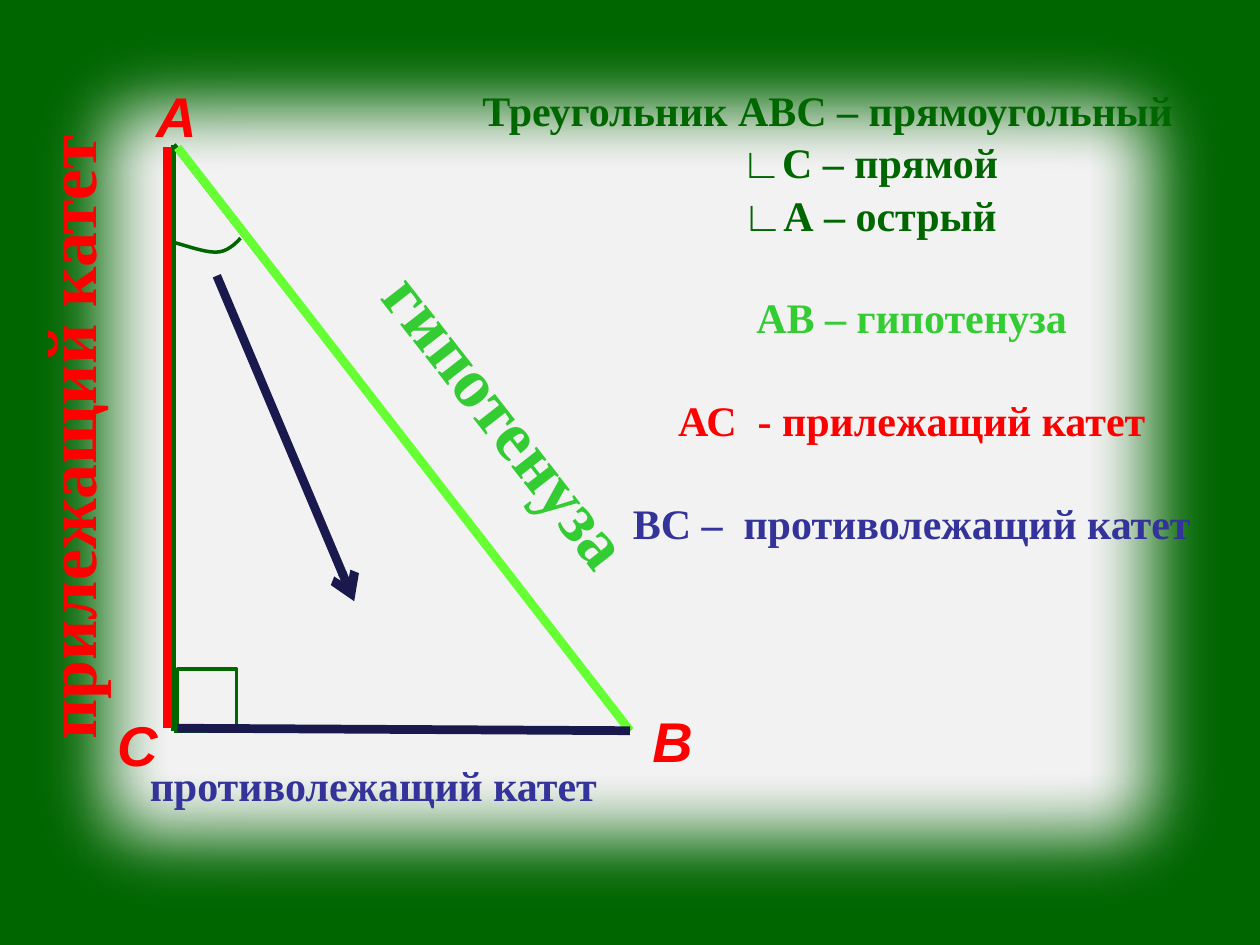
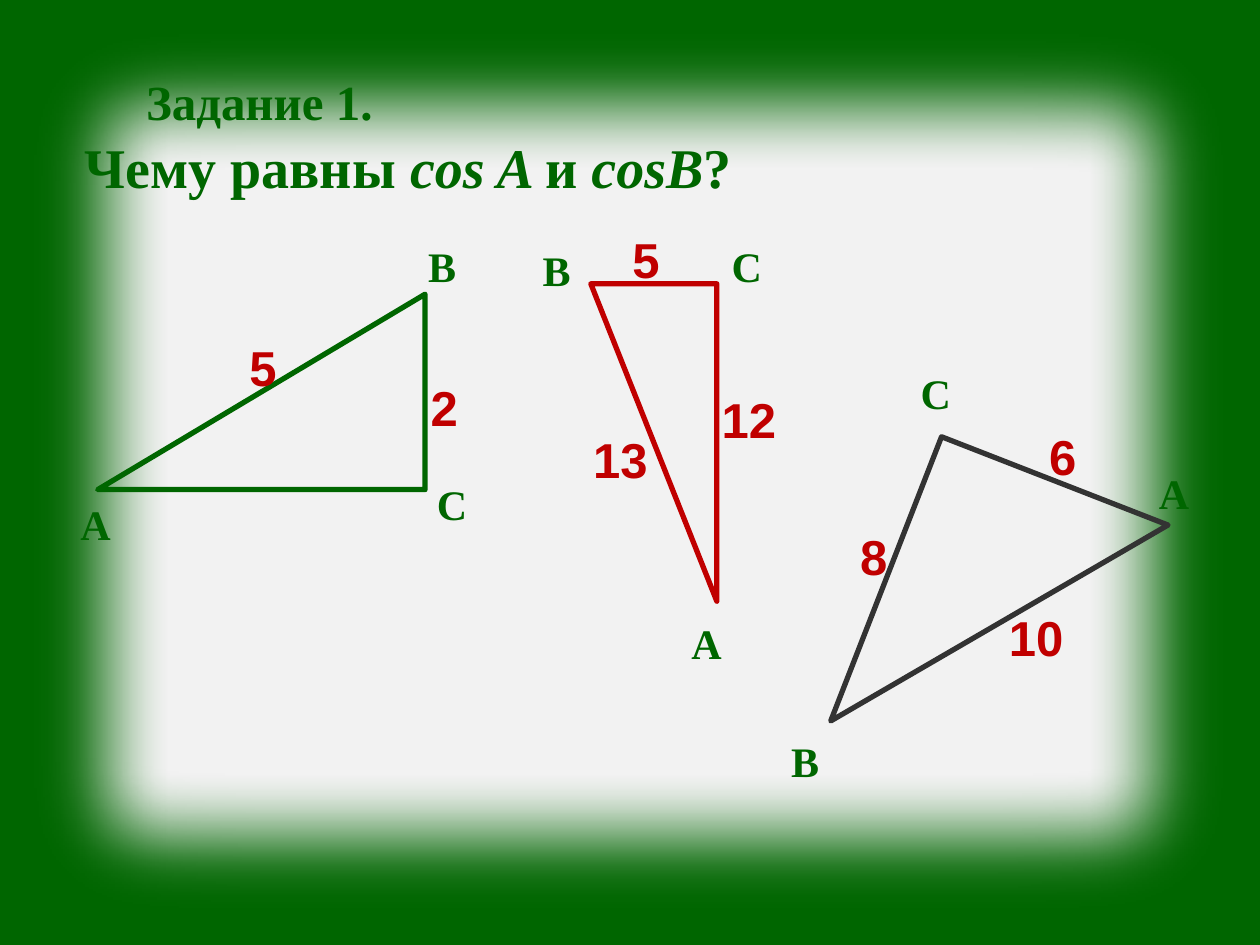
from pptx import Presentation
from pptx.dml.color import RGBColor
from pptx.enum.shapes import MSO_CONNECTOR, MSO_SHAPE
from pptx.enum.text import MSO_ANCHOR, MSO_AUTO_SIZE, PP_ALIGN
from pptx.oxml.ns import qn
from pptx.util import Cm, Pt
from lxml import etree

RECTANGLE = MSO_SHAPE.RECTANGLE
RIGHT_TRIANGLE = MSO_SHAPE.RIGHT_TRIANGLE
STRAIGHT = MSO_CONNECTOR.STRAIGHT
FIT_SHAPE = MSO_AUTO_SIZE.SHAPE_TO_FIT_TEXT
TOP = MSO_ANCHOR.TOP
LEFT, CENTER = PP_ALIGN.LEFT, PP_ALIGN.CENTER

SERIF, SANS = "Times New Roman", "Arial"
COLORS = {
    name: RGBColor.from_string(value)
    for name, value in {
        "green": "006600", "panel": "F2F2F2", "red": "FF0000",
        "lime": "66FF33", "hypotenuse": "33CC33", "navy": "19194D",
        "blue": "333399", "dark red": "C00000", "gray": "333333",
    }.items()
}


def write_text(slide, box, lines, size, color, font=SERIF, wrap=False,
               align=LEFT, shape=None):
    """Write one paragraph per line into a text box or a given placeholder."""
    left, top, width, height = (Cm(value) for value in box)
    if shape is None:
        shape = slide.shapes.add_textbox(left, top, width, height)
    else:
        shape.left, shape.top, shape.width, shape.height = left, top, width, height
    frame = shape.text_frame
    frame.text = lines
    frame.word_wrap = wrap
    frame.auto_size = FIT_SHAPE
    frame.vertical_anchor = TOP
    for paragraph in frame.paragraphs:
        paragraph.alignment = align
        paragraph.space_before = Pt(size * 0.05)
        paragraph.font.name = font
        paragraph.font.size = Pt(size)
        paragraph.font.bold = True
        paragraph.font.color.rgb = COLORS[color]
    return shape


def add_line(slide, start, end, color, width):
    line = slide.shapes.add_connector(
        STRAIGHT, *(Cm(value) for value in (*start, *end)))
    line.line.color.rgb = COLORS[color]
    line.line.width = Pt(width)
    etree.SubElement(line.element.spPr, qn("a:effectLst"))
    return line


presentation = Presentation()
presentation.slide_width, presentation.slide_height = Cm(25.4), Cm(19.05)
title_only, blank = presentation.slide_layouts[5], presentation.slide_layouts[6]
theory = presentation.slides.add_slide(blank)
task = presentation.slides.add_slide(title_only)

# Shared green frame around a soft-edged panel
for slide in (theory, task):
    slide.background.fill.solid()
    slide.background.fill.fore_color.rgb = COLORS["green"]
    panel = slide.shapes.add_shape(
        RECTANGLE, 0, 0, presentation.slide_width, presentation.slide_height)
    panel.fill.solid()
    panel.fill.fore_color.rgb = COLORS["panel"]
    panel.line.fill.background()
    effects = etree.SubElement(panel.element.spPr, qn("a:effectLst"))
    etree.SubElement(effects, qn("a:softEdge"), rad="635000")
    slide.shapes.element.insert(2, panel.element)

# Slide 1: triangle outline
point_a, point_b, point_c = (3.5, 2.92), (12.7, 14.73), (3.5, 14.73)
for start, end in ((point_a, point_c), (point_a, point_b), (point_b, point_c)):
    add_line(theory, start, end, "green", 3)

# Vertex letters
for letter, left, top in (("С", 2.11, 14.2), ("В", 12.9, 14.12), ("А", 2.9, 1.52)):
    letter_box = write_text(
        theory, (left, top, 1.35, 1.6), letter, 32, "red", SANS)
    letter_box.text_frame.paragraphs[0].font.italic = True

# Definitions: text, colour, left margin, space before
definitions = [
    ("Треугольник АВС – прямоугольный", "green", 0, 1.2),
    ("∟С – прямой", "green", 1.69, 1.2),
    ("∟А – острый", "green", 1.69, 1.2),
    ("АВ – гипотенуза", "hypotenuse", 3.39, 30),
    ("АС  - прилежащий катет", "red", 3.39, 30),
    ("ВС –  противолежащий катет", "blue", 3.39, 30),
]
definition_box = write_text(
    theory, (8.94, 1.57, 15.49, 11.53),
    "\n".join(definition[0] for definition in definitions),
    24, "green", wrap=True, align=CENTER)
for paragraph, (_, color, margin, gap) in zip(
        definition_box.text_frame.paragraphs, definitions):
    paragraph.font.color.rgb = COLORS[color]
    paragraph.space_before = Pt(gap)
    paragraph_properties = paragraph._p.get_or_add_pPr()
    paragraph_properties.set("marL", str(Cm(margin)))
    paragraph_properties.set("indent", "0")

# Right-angle mark
right_angle = theory.shapes.add_shape(
    RECTANGLE, Cm(3.58), Cm(13.49), Cm(1.19), Cm(1.19))

# Acute-angle arc, sampled from two cubic curves
arc_curves = [
    ((3.48, 4.88), (3.84, 4.98), (4.19, 5.11), (4.42, 5.08)),
    ((4.42, 5.08), (4.65, 5.05), (4.85, 4.8), (4.85, 4.8)),
]
arc_points = []
for curve in arc_curves:
    for step in range(1, 9):
        t = step / 8
        weights = ((1 - t) ** 3, 3 * t * (1 - t) ** 2, 3 * t ** 2 * (1 - t), t ** 3)
        arc_points.append(tuple(
            Cm(sum(weight * point[axis] for weight, point in zip(weights, curve)))
            for axis in (0, 1)))
arc_builder = theory.shapes.build_freeform(*(Cm(value) for value in arc_curves[0][0]))
arc_builder.add_line_segments(arc_points, close=False)
arc = arc_builder.convert_to_shape()

for angle_mark in (right_angle, arc):
    angle_mark.fill.background()
    angle_mark.line.color.rgb = COLORS["green"]
    angle_mark.line.width = Pt(2)
    angle_mark.shadow.inherit = False

# Coloured sides and the arrow to the opposite leg
add_line(theory, (3.38, 2.97), (3.38, 14.68), "red", 5)
add_line(theory, (3.58, 2.97), point_b, "lime", 5)
add_line(theory, (3.58, 14.68), point_b, "navy", 5)
arrow = add_line(theory, (4.37, 5.56), (7.14, 12.12), "navy", 5)
etree.SubElement(arrow.line._get_or_add_ln(), qn("a:tailEnd"), type="arrow")

# Side names
adjacent_name = write_text(
    theory, (0.41, 2.59, 2.24, 12.57), "прилежащий катет", 40, "red")
adjacent_name.element.txBody.bodyPr.set("vert", "vert270")
write_text(theory, (2.77, 15.19, 9.93, 1.27), "противолежащий катет",
           24, "blue", wrap=True)
hypotenuse_name = write_text(
    theory, (6.38, 7.7, 8.13, 1.95), "гипотенуза", 40, "hypotenuse", wrap=True)
hypotenuse_name.rotation = 52

# Slide 2: title and question
write_text(task, (2.69, 1.32, 5.13, 1.45), "Задание 1.", 28, "green",
           shape=task.shapes.title)
question = write_text(task, (1.45, 2.54, 13.72, 1.63), "", 32, "green")
for text, italic in (("Чему равны ", False), ("cos A ", True), ("и ", False),
                     ("cosB", True), ("?", False)):
    run = question.text_frame.paragraphs[0].add_run()
    run.text = text
    run.font.italic = italic

# Triangles
for left, top, width, height, rotation, color in (
        (3.3, 4.6, 3.94, 6.6, 270, "green"),
        (11.91, 5.72, 2.54, 6.4, 180, "dark red"),
        (17.07, 10.11, 6.15, 4.9, 111.3, "gray")):
    triangle = task.shapes.add_shape(
        RIGHT_TRIANGLE, Cm(left), Cm(top), Cm(width), Cm(height))
    triangle.rotation = rotation
    triangle.fill.background()
    triangle.line.color.rgb = COLORS[color]
    triangle.line.width = Pt(3)
    triangle.shadow.inherit = False

# Vertex letters
vertices = {
    "А": ((1.37, 9.93), (13.69, 12.32), (23.11, 9.3)),
    "В": ((8.38, 4.72), (10.69, 4.8), (15.7, 14.71)),
    "С": ((8.56, 9.53), (14.5, 4.72), (18.31, 7.29)),
}
for letter, places in vertices.items():
    for left, top in places:
        write_text(task, (left, top, 1.12, 1.28), letter, 24, "green")

# Side lengths
for length, left, top in (
        ("5", 4.78, 6.68), ("2", 8.43, 7.49), ("5", 12.5, 4.5),
        ("12", 14.3, 7.72), ("13", 11.71, 8.53),
        ("8", 17.09, 10.49), ("6", 20.9, 8.48), ("10", 20.09, 12.12)):
    width = 0.5 + 0.56 * len(length)
    write_text(task, (left, top, width, 1.45), length, 28, "dark red", SANS)

presentation.save("out.pptx")
